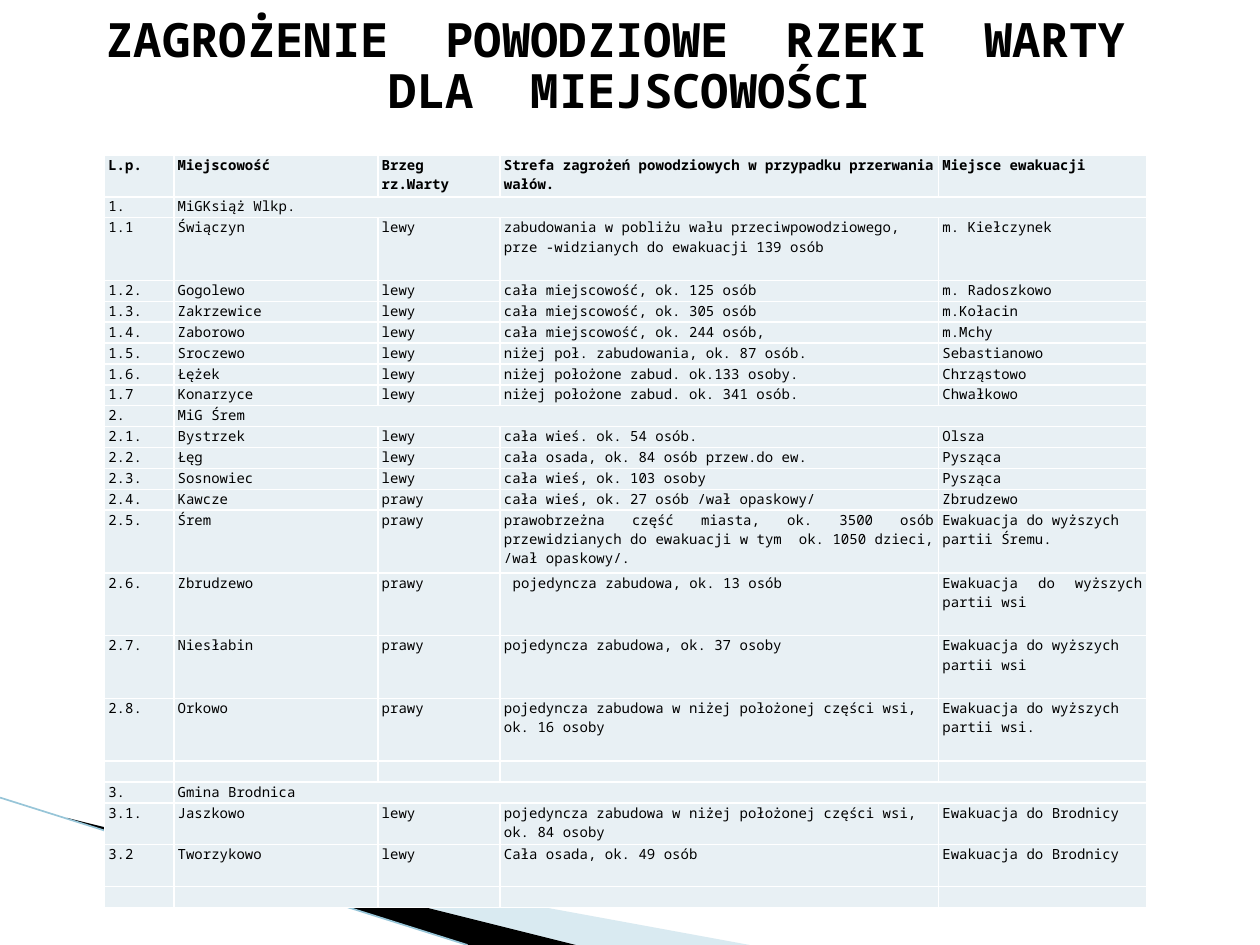
from dataclasses import dataclass

from lxml.etree import SubElement
from pptx import Presentation
from pptx.dml.color import RGBColor as RGB
from pptx.enum.shapes import MSO_CONNECTOR as CONNECTOR
from pptx.enum.text import PP_ALIGN as ALIGN
from pptx.oxml.ns import qn
from pptx.util import Inches, Pt


@dataclass(frozen=True)
class Theme:
    font: str = "Noto Sans Mono"
    ink: str = "000000"
    cell: str = "E8F0F4"
    border: str = "FFFFFF"
    pale: str = "A0CBDC"
    stripe: str = "97C5D8"
    title_size: float = 27
    table_size: float = 8


THEME = Theme()

TITLE = "ZAGROŻENIE  POWODZIOWE  RZEKI  WARTY  DLA  MIEJSCOWOŚCI"
COLUMN_WIDTHS = [0.55, 1.62, 0.97, 3.48, 1.65]
TABLE_HEIGHT = 5.98

# Height in text lines, then the cells; two cells make a section row
ROWS = [
    (2, "L.p.", "Miejscowość", "Brzeg rz.Warty",
     "Strefa zagrożeń powodziowych w przypadku przerwania wałów.", "Miejsce ewakuacji"),
    (1, "1.", "MiGKsiąż Wlkp."),
    (3, "1.1", "Świączyn", "lewy",
     "zabudowania w pobliżu wału przeciwpowodziowego, prze -widzianych do ewakuacji 139 osób",
     "m. Kiełczynek"),
    (1, "1.2.", "Gogolewo", "lewy", "cała miejscowość, ok. 125 osób", "m. Radoszkowo"),
    (1, "1.3.", "Zakrzewice", "lewy", "cała miejscowość, ok. 305 osób", "m.Kołacin"),
    (1, "1.4.", "Zaborowo", "lewy", "cała miejscowość, ok. 244 osób,", "m.Mchy"),
    (1, "1.5.", "Sroczewo", "lewy", "niżej poł. zabudowania, ok. 87 osób.", "Sebastianowo"),
    (1, "1.6.", "Łężek", "lewy", "niżej położone zabud. ok.133 osoby.", "Chrząstowo"),
    (1, "1.7", "Konarzyce", "lewy", "niżej położone zabud. ok. 341 osób.", "Chwałkowo"),
    (1, "2.", "MiG Śrem"),
    (1, "2.1.", "Bystrzek", "lewy", "cała wieś. ok. 54 osób.", "Olsza"),
    (1, "2.2.", "Łęg", "lewy", "cała osada, ok. 84 osób przew.do ew.", "Pysząca"),
    (1, "2.3.", "Sosnowiec", "lewy", "cała wieś, ok. 103 osoby", "Pysząca"),
    (1, "2.4.", "Kawcze", "prawy", "cała wieś, ok. 27 osób /wał opaskowy/", "Zbrudzewo"),
    (3, "2.5.", "Śrem", "prawy",
     "prawobrzeżna część miasta, ok. 3500 osób przewidzianych do ewakuacji w tym  ok. 1050 "
     "dzieci, /wał opaskowy/.", "Ewakuacja do wyższych partii Śremu."),
    (3, "2.6.", "Zbrudzewo", "prawy", "pojedyncza zabudowa, ok. 13 osób",
     "Ewakuacja do wyższych partii wsi"),
    (3, "2.7.", "Niesłabin", "prawy", "pojedyncza zabudowa, ok. 37 osoby",
     "Ewakuacja do wyższych partii wsi"),
    (3, "2.8.", "Orkowo", "prawy",
     "pojedyncza zabudowa w niżej położonej części wsi, ok. 16 osoby",
     "Ewakuacja do wyższych partii wsi."),
    (1, "", "", "", "", ""),
    (1, "3.", "Gmina Brodnica"),
    (2, "3.1.", "Jaszkowo", "lewy",
     "pojedyncza zabudowa w niżej położonej części wsi, ok. 84 osoby",
     "Ewakuacja do Brodnicy"),
    (2, "3.2", "Tworzykowo", "lewy", "Cała osada, ok. 49 osób", "Ewakuacja do Brodnicy"),
    (1, "", "", "", "", ""),
]

# Left-aligned columns by row number; every other cell is justified
LEFT_COLUMNS = {"1.1": (3,), "2.": (1,), "2.5.": (4,), "2.6.": (1, 3), "2.7.": (3, 4),
                "2.8.": (3, 4), "3.": (1,), "3.1.": (3, 4), "3.2": (3, 4)}
INDENTED_CELL = ("2.6.", 3)


def style_runs(paragraph, size, bold):
    for run in paragraph.runs:
        run.font.name = THEME.font
        run.font.size = Pt(size)
        run.font.bold = bold
        run.font.color.rgb = RGB.from_string(THEME.ink)


def add_wedge(slide, points, color, alpha=None):
    corners = [(Inches(x), Inches(y)) for x, y in points]
    builder = slide.shapes.build_freeform(*corners[0])
    builder.add_line_segments(corners[1:], close=True)
    wedge = builder.convert_to_shape()
    wedge.shadow.inherit = False
    wedge.line.fill.background()
    wedge.fill.solid()
    wedge.fill.fore_color.rgb = RGB.from_string(color)
    if alpha is not None:
        tint = wedge.fill._xPr.find(f"{qn('a:solidFill')}/{qn('a:srgbClr')}")
        SubElement(tint, qn("a:alpha"), val=str(alpha * 1000))


def add_stripe(slide, start, end):
    stripe = slide.shapes.add_connector(
        CONNECTOR.STRAIGHT, *(Inches(value) for value in (*start, *end)))
    stripe.line.color.rgb = RGB.from_string(THEME.stripe)
    stripe.line.width = Pt(0.95)
    SubElement(stripe._element.spPr, qn("a:effectLst"))


def add_title(slide):
    title = slide.shapes.add_textbox(Inches(0.5), Inches(0.05), Inches(9), Inches(7.4))
    frame = title.text_frame
    frame.word_wrap = True
    frame.margin_top = Inches(0.08)
    frame.text = TITLE
    heading = frame.paragraphs[0]
    heading.alignment = ALIGN.CENTER
    heading.line_spacing = 0.9
    style_runs(heading, THEME.title_size, True)


def add_borders(cell):
    properties = cell._tc.get_or_add_tcPr()
    for position, side in enumerate(("a:lnL", "a:lnR", "a:lnT", "a:lnB")):
        border = properties.makeelement(qn(side), {"w": str(Pt(1))})
        SubElement(SubElement(border, qn("a:solidFill")), qn("a:srgbClr"), val=THEME.border)
        properties.insert(position, border)


def fill_cell(cell, text, alignment, bold, indent):
    cell.margin_left = Inches(0.03 + indent)
    cell.margin_right = Inches(0.03)
    cell.margin_top = cell.margin_bottom = 0
    cell.fill.solid()
    cell.fill.fore_color.rgb = RGB.from_string(THEME.cell)
    add_borders(cell)
    cell.text_frame.text = text
    entry = cell.text_frame.paragraphs[0]
    entry.alignment = alignment
    style_runs(entry, THEME.table_size, bold)
    if not text:  # keeps empty rows as low as the others
        SubElement(entry._p, qn("a:endParaRPr"), sz=str(int(THEME.table_size * 100)))


def add_evacuation_table(slide):
    table = slide.shapes.add_table(
        len(ROWS), len(COLUMN_WIDTHS), Inches(0.83), Inches(1.23),
        Inches(sum(COLUMN_WIDTHS)), Inches(TABLE_HEIGHT)).table
    table.first_row = table.horz_banding = False
    for column, width in zip(table.columns, COLUMN_WIDTHS):
        column.width = Inches(width)
    line_height = TABLE_HEIGHT / sum(lines for lines, *_ in ROWS)
    last = len(COLUMN_WIDTHS) - 1
    for r, (lines, *texts) in enumerate(ROWS):
        table.rows[r].height = Inches(lines * line_height)
        if len(texts) == 2:
            table.cell(r, 1).merge(table.cell(r, last))
        number = texts[0]
        for c in range(last + 1):
            left = c in LEFT_COLUMNS.get(number, ())
            fill_cell(table.cell(r, c), texts[c] if c < len(texts) else "",
                      ALIGN.LEFT if left else ALIGN.JUSTIFY, r == 0,
                      0.07 if (number, c) == INDENTED_CELL else 0)


def main():
    deck = Presentation()
    deck.slide_width, deck.slide_height = Inches(10), Inches(7.5)
    slide = deck.slides.add_slide(deck.slide_layouts[6])

    # Corner decoration
    add_wedge(slide, [(0.55, 6.51), (5.95, 7.5), (4.56, 7.5), (0.55, 6.5)], THEME.pale, 40)
    add_wedge(slide, [(0.53, 6.49), (4.57, 7.5), (3.72, 7.5), (0.54, 6.5)], THEME.ink)
    add_stripe(slide, (0, 6.33), (3.71, 7.5))

    # Content
    add_title(slide)
    add_evacuation_table(slide)
    deck.save("out.pptx")


if __name__ == "__main__":
    main()
